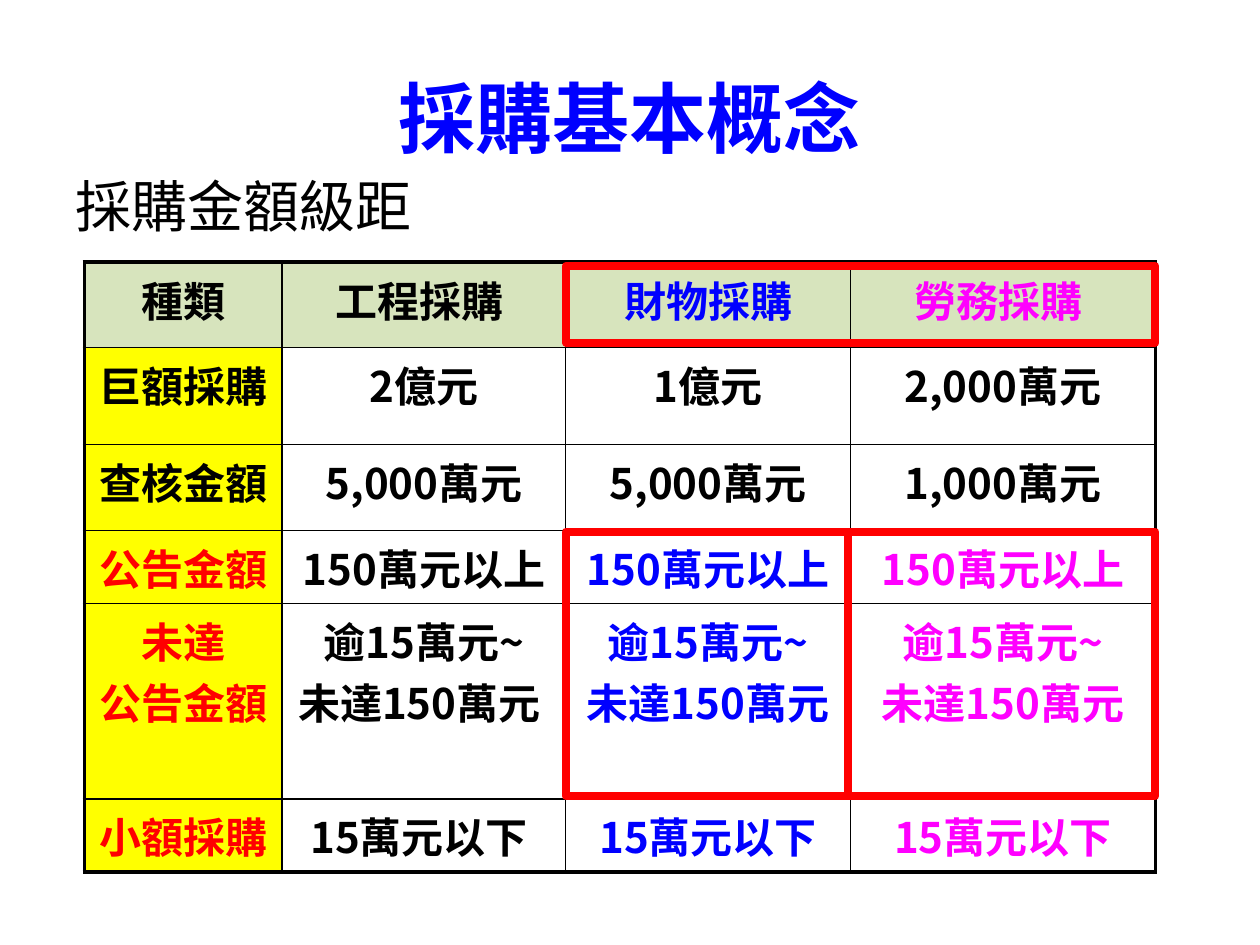
"""Build the slide on procurement amount thresholds."""
from lxml import etree
from pptx import Presentation
from pptx.dml.color import RGBColor
from pptx.enum.shapes import MSO_SHAPE
from pptx.enum.text import MSO_ANCHOR, PP_ALIGN
from pptx.oxml.ns import qn
from pptx.util import Inches, Pt

RECTANGLE = MSO_SHAPE.RECTANGLE
CENTER, LEFT = PP_ALIGN.CENTER, PP_ALIGN.LEFT
MIDDLE, TOP = MSO_ANCHOR.MIDDLE, MSO_ANCHOR.TOP

FONT = "Noto Sans CJK SC"
BLACK, BLUE, RED, MAGENTA = "000000", "0000FF", "FF0000", "FF00FF"
GREEN, YELLOW = "D7E4BD", "FFFF00"
THIN, THICK = 1, 2.25
HANGING = 0.38

HEADINGS = [
    ("採購基本概念", (0.5, 0.3, 9, 1.25), CENTER, MIDDLE,
     {"size": Pt(44), "bold": True}, BLUE),
    ("採購金額級距", (0.5, 1.31, 9, 0.75), LEFT, TOP,
     {"size": Pt(32), "bold": False}, BLACK),
]
ROWS = [
    ["種類", "工程採購 ", " 財物採購 ", "勞務採購 "],
    ["巨額採購", "2億元", "1億元", "2,000萬元"],
    ["查核金額", "5,000萬元", "5,000萬元", "1,000萬元"],
    ["公告金額", "150萬元以上", "150萬元以上", "150萬元以上"],
    ["未達\n公告金額", "逾15萬元~\n未達150萬元 ",
     "逾15萬元~\n未達150萬元", "逾15萬元~\n未達150萬元"],
    ["小額採購", "15萬元以下 ", "15萬元以下", "15萬元以下"],
]
PLAIN_COLORS = [BLACK] * 4
ACCENT_COLORS = [RED, BLACK, BLUE, MAGENTA]
HEADER_COLORS = [BLACK, BLACK, BLUE, MAGENTA]
ROW_COLORS = [HEADER_COLORS] + [PLAIN_COLORS] * 2 + [ACCENT_COLORS] * 3
TABLE_LEFT, TABLE_TOP = 0.67, 2.08
COLUMN_WIDTHS = [1.57, 2.25, 2.26, 2.42]
ROW_HEIGHTS = [0.68, 0.77, 0.68, 0.58, 1.55, 0.58]
CELL_FORMAT = {"size": Pt(24), "bold": True}

FRAME_LEFT, FRAME_SPLIT, FRAME_RIGHT = 4.49, 6.73, 9.17
FRAMES = [
    (FRAME_LEFT, FRAME_SPLIT, 4.22, 2.1),
    (FRAME_SPLIT, FRAME_RIGHT, 4.22, 2.1),
    (FRAME_LEFT, FRAME_RIGHT, 2.11, 0.61),
]


def rgb(value):
    """Turn a hex string into a colour."""
    return RGBColor.from_string(value)


def write_text(text_frame, text, alignment, font_format, color):
    """Write one paragraph per line with a single format."""
    for index, line in enumerate(text.split("\n")):
        paragraph = text_frame.add_paragraph() if index else text_frame.paragraphs[0]
        paragraph.alignment = alignment
        run = paragraph.add_run()
        run.text = line
        for name, value in {"name": FONT, **font_format}.items():
            setattr(run.font, name, value)
        run.font.color.rgb = rgb(color)
        east_asian = etree.SubElement(run.font._element, qn("a:ea"))
        east_asian.set("typeface", FONT)


def set_borders(cell, widths):
    """Draw solid black borders of the given point widths."""
    properties = cell._tc.get_or_add_tcPr()
    for index, (side, width) in enumerate(widths.items()):
        line = etree.Element(qn(f"a:ln{side}"), w=str(Pt(width)))
        fill = etree.SubElement(line, qn("a:solidFill"))
        etree.SubElement(fill, qn("a:srgbClr"), val=BLACK)
        properties.insert(index, line)


def add_heading(slide, text, box, alignment, anchor, font_format, color):
    """Add a heading as a wrapped text box."""
    text_frame = slide.shapes.add_textbox(*map(Inches, box)).text_frame
    text_frame.word_wrap = True
    text_frame.vertical_anchor = anchor
    write_text(text_frame, text, alignment, font_format, color)


def format_cell(cell, row, column):
    """Fill, border and write one table cell."""
    if row == 0 or column == 0:
        cell.fill.solid()
        cell.fill.fore_color.rgb = rgb(YELLOW if row else GREEN)
    else:
        cell.fill.background()
    last_row, last_column = len(ROWS) - 1, len(COLUMN_WIDTHS) - 1
    set_borders(cell, {
        "L": THICK if column == 0 else THIN,
        "R": THICK if column == last_column else THIN,
        "T": THICK if row == 0 else THIN,
        "B": THICK if row == last_row else THIN,
    })
    write_text(cell.text_frame, ROWS[row][column], CENTER, CELL_FORMAT,
               ROW_COLORS[row][column])
    for paragraph in cell.text_frame.paragraphs:
        properties = paragraph._p.get_or_add_pPr()
        properties.set("marL", str(Inches(HANGING)))
        properties.set("indent", str(-Inches(HANGING)))


def add_amount_table(slide):
    """Add the table of amounts by procurement type."""
    table = slide.shapes.add_table(
        len(ROWS), len(COLUMN_WIDTHS), Inches(TABLE_LEFT), Inches(TABLE_TOP),
        Inches(sum(COLUMN_WIDTHS)), Inches(sum(ROW_HEIGHTS))).table
    table.first_row = table.horz_banding = False
    for column, width in zip(table.columns, COLUMN_WIDTHS):
        column.width = Inches(width)
    for row, height in zip(table.rows, ROW_HEIGHTS):
        row.height = Inches(height)
    for row in range(len(ROWS)):
        for column in range(len(COLUMN_WIDTHS)):
            format_cell(table.cell(row, column), row, column)


def add_frame(slide, left, right, top, height):
    """Add a red outline around a group of cells."""
    shape = slide.shapes.add_shape(
        RECTANGLE, Inches(left), Inches(top), Inches(right - left), Inches(height))
    shape.shadow.inherit = False
    shape.fill.background()
    shape.line.color.rgb = rgb(RED)
    shape.line.width = Pt(4.5)


def main():
    """Build and save the presentation."""
    presentation = Presentation()
    presentation.slide_width, presentation.slide_height = Inches(10), Inches(7.5)
    slide = presentation.slides.add_slide(presentation.slide_layouts[6])
    for heading in HEADINGS:
        add_heading(slide, *heading)
    add_amount_table(slide)
    for frame in FRAMES:
        add_frame(slide, *frame)
    presentation.save("out.pptx")


if __name__ == "__main__":
    main()
